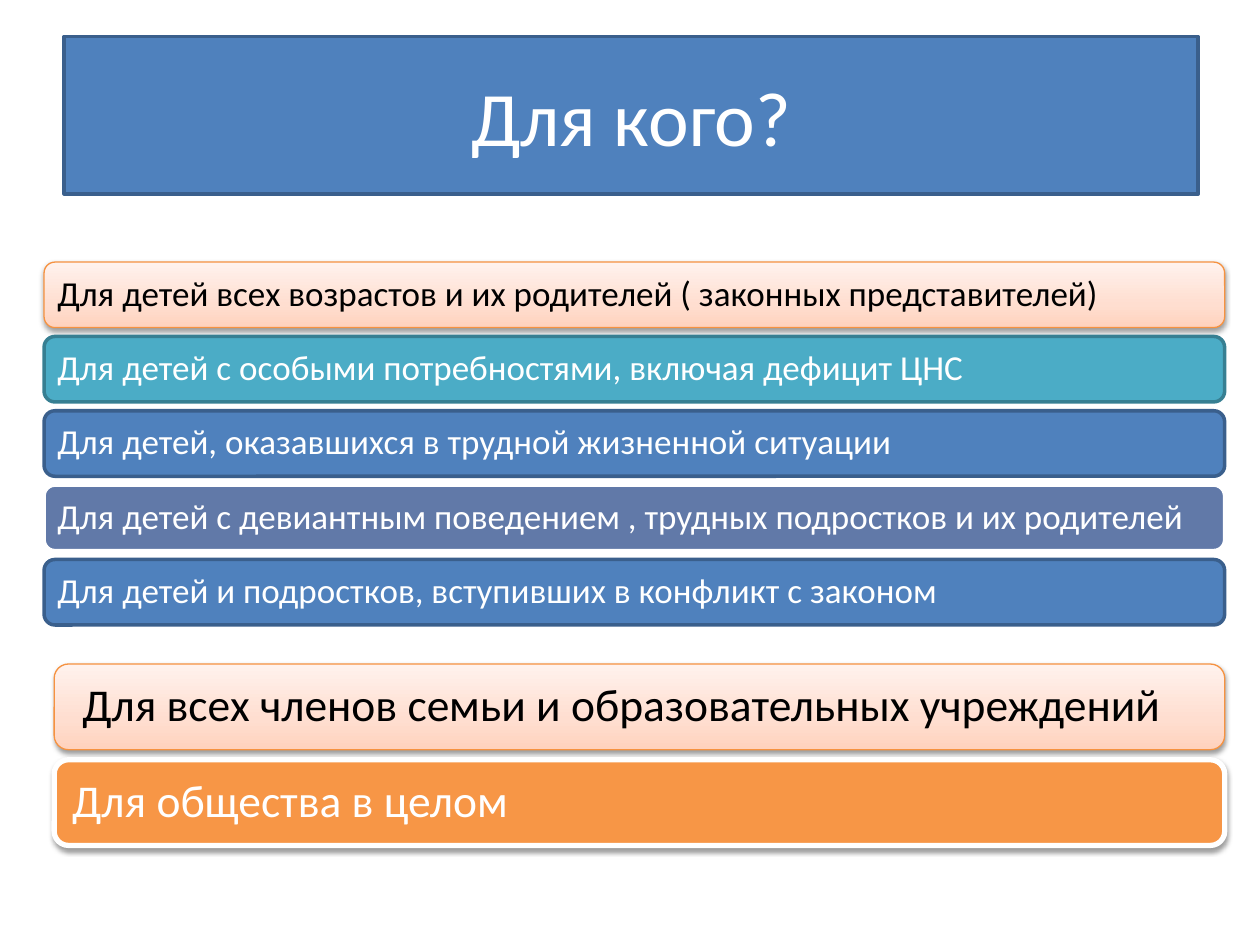
import copy

import lxml.etree
import pptx
import pptx.dml.color
import pptx.enum.shapes
import pptx.enum.text
import pptx.oxml.ns
import pptx.util

Inches, Pt = pptx.util.Inches, pptx.util.Pt
FONT = "Calibri"
COLORS = {
    "blue": "4F81BD", "blue edge": "3A5F8C",
    "teal": "4BACC6", "teal edge": "377F92",
    "slate": "6179A8", "orange": "F79646", "orange edge": "F69240",
    "white": "FFFFFF", "black": "000000",
}
PEACH_STOPS = [(0, "FFD2BD"), (0.35, "FFDED0"), (1, "FFF2ED")]

# Fill, edge, edge width in points, text colour, shadow
STYLES = {
    "peach": (None, "orange edge", 0.75, "black", True),
    "teal": ("teal", "teal edge", 2, "white", False),
    "blue": ("blue", "blue edge", 2, "white", False),
    "slate": ("slate", "white", 2, "white", False),
    "orange": ("orange", "white", 3, "white", True),
}
CHILDREN = [
    ("Для детей всех возрастов и их родителей ( законных представителей)", "peach", 0),
    ("Для детей с особыми потребностями, включая дефицит ЦНС", "teal", 0),
    ("Для детей, оказавшихся в трудной жизненной ситуации", "blue", 0),
    ("Для детей с девиантным поведением , трудных подростков и их родителей", "slate", 0),
    ("Для детей и подростков, вступивших в конфликт с законом", "blue", 0),
]
SOCIETY = [
    ("Для всех членов семьи и образовательных учреждений", "peach", 0.08),
    ("Для общества в целом", "orange", 0),
]


def rgb(name):
    return pptx.dml.color.RGBColor.from_string(COLORS[name])


def paint(shape, fill, edge, width):
    shape.fill.solid()
    shape.fill.fore_color.rgb = rgb(fill)
    shape.line.color.rgb = rgb(edge)
    shape.line.width = Pt(width)


def paint_peach(shape, edge, width):
    """Three-stop gradient, darkest at the bottom."""
    shape.fill.gradient()
    shape.fill.gradient_angle = 90
    first = shape.fill.gradient_stops[0]._gs
    first.addnext(copy.deepcopy(first))
    for stop, (position, color) in zip(shape.fill.gradient_stops, PEACH_STOPS):
        stop.position = position
        stop.color.rgb = pptx.dml.color.RGBColor.from_string(color)
    shape.line.color.rgb = rgb(edge)
    shape.line.width = Pt(width)


def add_shadow(shape):
    qn = pptx.oxml.ns.qn
    effects = shape._element.spPr.find(qn("a:effectLst"))
    shadow = lxml.etree.SubElement(
        effects, qn("a:outerShdw"), blurRad=str(Pt(3.1)), dist=str(Pt(1.6)),
        dir="5400000", rotWithShape="0")
    color = lxml.etree.SubElement(shadow, qn("a:srgbClr"), val=COLORS["black"])
    lxml.etree.SubElement(color, qn("a:alpha"), val="38000")


def write(shape, text, size, color, align):
    frame = shape.text_frame
    frame.word_wrap = True
    frame.vertical_anchor = pptx.enum.text.MSO_ANCHOR.MIDDLE
    para = frame.paragraphs[0]
    para.alignment = align
    span = para.add_run()
    span.text = text
    span.font.name = FONT
    span.font.size = Pt(size)
    span.font.color.rgb = rgb(color)
    return para


def add_title(page, text):
    title = page.shapes.title
    title.left, title.top = Inches(0.51), Inches(0.29)
    title.width, title.height = Inches(9), Inches(1.25)
    paint(title, "blue", "blue edge", 2)
    write(title, text, 44, "white", pptx.enum.text.PP_ALIGN.CENTER)


def add_bar(page, area, text, style, size, inset, indent):
    fill, edge, width, color, shadowed = STYLES[style]
    bar = page.shapes.add_shape(
        pptx.enum.shapes.MSO_SHAPE.ROUNDED_RECTANGLE, *map(Inches, area))
    bar.shadow.inherit = False
    if fill:
        paint(bar, fill, edge, width)
    else:
        paint_peach(bar, edge, width)
    if shadowed:
        add_shadow(bar)
    para = write(bar, text, size, color, pptx.enum.text.PP_ALIGN.LEFT)
    para.line_spacing = 0.9
    frame = bar.text_frame
    frame.margin_left = Inches(inset + indent)
    frame.margin_right = frame.margin_top = frame.margin_bottom = Inches(inset)


def add_stack(page, items, left, top, width, height, pitch, size, inset):
    """Equal bars, one under another, their tops a pitch apart."""
    for row, (text, style, indent) in enumerate(items):
        area = (left, top + row * pitch, width, height)
        add_bar(page, area, text, style, size, inset, indent)


def main():
    deck = pptx.Presentation()
    deck.slide_width, deck.slide_height = Inches(10), Inches(7.5)
    page = deck.slides.add_slide(deck.slide_layouts[5])
    add_title(page, "Для кого?")
    add_stack(page, CHILDREN, left=0.35, top=2.08, width=9.37, height=0.52,
              pitch=0.59, size=20, inset=0.08)
    add_stack(page, SOCIETY, left=0.43, top=5.27, width=9.29, height=0.68,
              pitch=0.76, size=26, inset=0.11)
    deck.save("out.pptx")


if __name__ == "__main__":
    main()
